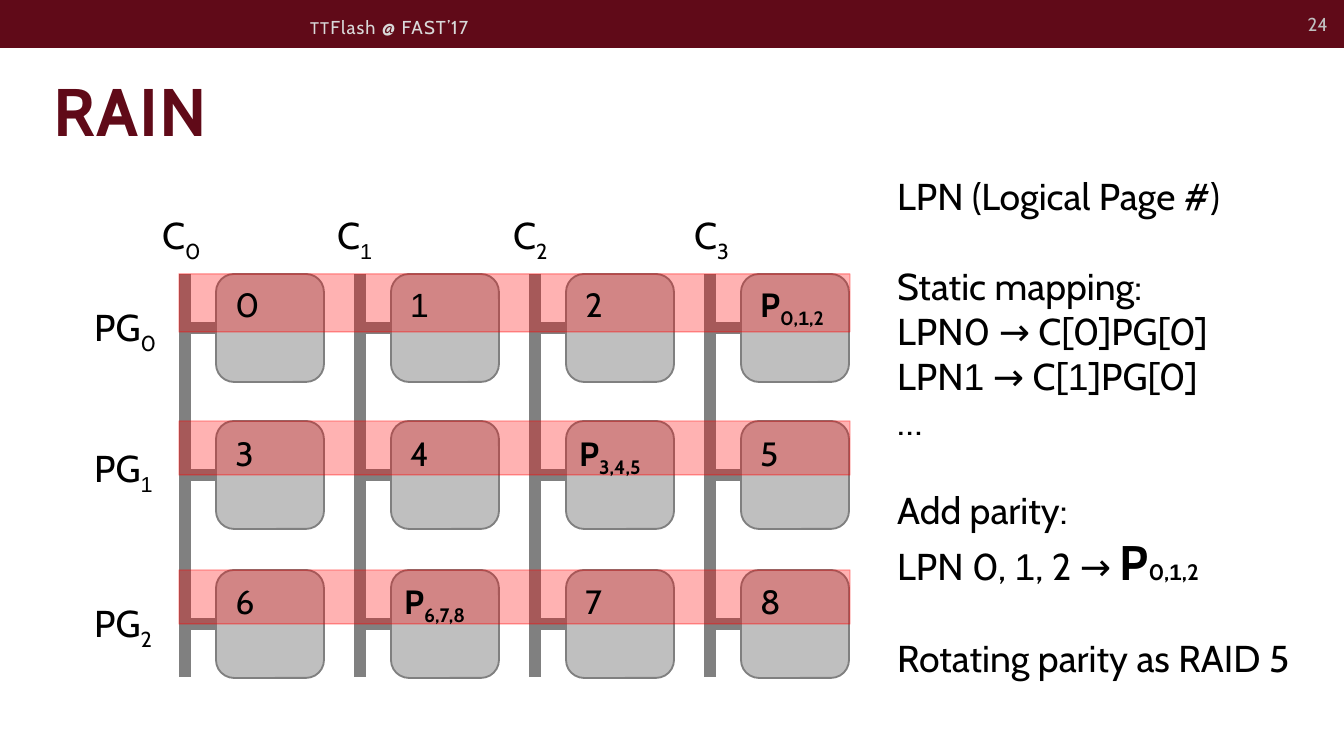
from collections import namedtuple
from itertools import groupby

from lxml.etree import SubElement
from pptx import Presentation
from pptx.dml.color import RGBColor
from pptx.enum.shapes import MSO_CONNECTOR as LINE, MSO_SHAPE as SHAPE
from pptx.enum.text import MSO_ANCHOR as ANCHOR, MSO_AUTO_SIZE as FIT, PP_ALIGN as ALIGN
from pptx.oxml.ns import qn
from pptx.util import Pt

MAROON = RGBColor(0x60, 0x0A, 0x18)
BLACK = RGBColor(0, 0, 0)
GRAY = RGBColor(0x80, 0x80, 0x80)
SILVER = RGBColor(0xBF, 0xBF, 0xBF)
PALE = RGBColor(0xD9, 0xD9, 0xD9)
RED = RGBColor(0xFF, 0, 0)

Box = namedtuple("Box", "x y w h")
Row = namedtuple("Row", "top band label text inset cells")

BUS, STEP, CARD = 104, 175, 108
HEADS = (68, 243, 419, 600)
ROWS = (
    Row(68, 58, 92, 71, 6, ("0", "1", "2", "P0,1,2")),
    Row(215, 54, 233, 220, 0, ("3", "4", "P3,4,5", "5")),
    Row(364, 54, 388, 368, 0, ("6", "P6,7,8", "7", "8")),
)


def px(n):
    return round(n * 914400 / 134.4)


def add_run(para, text, size, color=BLACK, bold=False, sub=False, gap=0, face="Cabin"):
    run = para.add_run()
    run.text = text
    font = run.font
    font.name, font.size, font.bold = face, Pt(size), bold
    font.color.rgb = color
    props = font._element
    if sub:
        props.set("baseline", "-25000")
    if gap:
        props.set("spc", str(gap))


def add_mix(para, text, size, **style):
    """Set the digit 1 in Arial and all else in Cabin."""
    for one, part in groupby(text, lambda c: c == "1"):
        add_run(para, "".join(part), size, face="Arial" if one else "Cabin", **style)


def add_text(slide, box, anchor=ANCHOR.TOP):
    frame = slide.shapes.add_textbox(*map(px, box)).text_frame
    frame.word_wrap = True
    frame.vertical_anchor = anchor
    return frame


def add_label(slide, box, stem, sub="", size=20, bold=False):
    para = add_text(slide, box).paragraphs[0]
    add_mix(para, stem, size, bold=bold)
    add_mix(para, sub, size, bold=bold, sub=True)


def add_wire(slide, x1, y1, x2, y2):
    wire = slide.shapes.add_connector(LINE.STRAIGHT, *map(px, (x1, y1, x2, y2)))
    wire.line.color.rgb = GRAY
    wire.line.width = Pt(6)
    SubElement(wire._element.spPr, qn("a:effectLst"))


def add_block(slide, kind, box, fill, line=None, width=1):
    block = slide.shapes.add_shape(kind, *map(px, box))
    block.shadow.inherit = False
    block.fill.solid()
    block.fill.fore_color.rgb = fill
    if line is None:
        block.line.fill.background()
    else:
        block.line.color.rgb = line
        block.line.width = Pt(width)
    return block


def add_band(slide, box):
    band = add_block(slide, SHAPE.RECTANGLE, box, RED, RED, 0.75)
    for tint in band._element.spPr.iter(qn("a:srgbClr")):
        SubElement(tint, qn("a:alpha")).set("val", "30000")


def add_header(slide, box):
    add_block(slide, SHAPE.RECTANGLE, box, MAROON)
    para = add_text(slide, Box(box.x + 297, box.y + 8, 478, 39), ANCHOR.MIDDLE).paragraphs[0]
    add_run(para, "TT", 9, PALE, gap=60)
    add_run(para, "Flash @ FAST’17", 10, PALE, gap=60)
    para = add_text(slide, Box(box.x + 1223, box.y - 1, 118, 50), ANCHOR.MIDDLE).paragraphs[0]
    para.alignment = ALIGN.RIGHT
    add_run(para, "24", 10, SILVER)


def add_title(slide, box):
    title = slide.shapes.title
    title.left, title.top, title.width, title.height = map(px, box)
    frame = title.text_frame
    frame.auto_size = FIT.NONE
    frame.vertical_anchor = ANCHOR.BOTTOM
    para = frame.paragraphs[0]
    para.alignment = ALIGN.LEFT
    add_run(para, "RAIN", 36, MAROON, bold=True, gap=50)


def add_grid(slide, box):
    """Channels run down, plane groups run across."""
    for col, head in enumerate(HEADS):
        bus = box.x + BUS + col * STEP
        add_wire(slide, bus, box.y + ROWS[0].top, bus, box.y + box.h)
        add_label(slide, Box(box.x + head, box.y, 83, 59), "C", str(col))
        for row in ROWS:
            top = box.y + row.top
            add_wire(slide, bus, top + CARD // 2, bus + 31, top + CARD // 2)
            add_block(slide, SHAPE.ROUNDED_RECTANGLE,
                      Box(bus + 31, top, CARD, CARD), SILVER, GRAY)

    for num, row in enumerate(ROWS):
        add_band(slide, Box(box.x + 98, box.y + row.top, box.w - 98, row.band))
        add_label(slide, Box(box.x, box.y + row.label, 100, 59), "PG", str(num))
        for col, cell in enumerate(row.cells):
            parity = cell[0] == "P"
            left = box.x + BUS + 31 + col * STEP + (row.inset if parity else 6)
            add_label(slide, Box(left, box.y + row.text, 110, 54),
                      cell[0], cell[1:], 18, parity)


def add_notes(slide, box):
    """Each line is a list of (text, size, bold) with a gap before it."""
    lines = (
        (0, [("LPN (Logical Page #)", 20, False)]),
        (24, [("Static mapping:", 20, False)]),
        (0, [("LPN0 → C[0]PG[0]", 20, False)]),
        (0, [("LPN1 → C[1]PG[0]", 20, False)]),
        (0, [("…", 20, False)]),
        (24, [("Add parity:", 20, False)]),
        (0, [("LPN 0, 1, 2 → ", 20, False), ("P", 26, True), ("0,1,2", 12, True)]),
        (24, [("Rotating parity as RAID 5", 20, False)]),
    )
    frame = add_text(slide, box)
    for num, (gap, parts) in enumerate(lines):
        para = frame.add_paragraph() if num else frame.paragraphs[0]
        if gap:
            para.space_before = Pt(gap)
        for text, size, bold in parts:
            add_mix(para, text, size, bold=bold)


def main():
    deck = Presentation()
    deck.slide_width, deck.slide_height = px(1344), px(756)
    slide = deck.slides.add_slide(deck.slide_layouts[5])
    add_header(slide, Box(0, 0, 1344, 48))
    add_title(slide, Box(40, 31, 1267, 126))
    add_grid(slide, Box(81, 206, 769, 471))
    add_notes(slide, Box(884, 167, 445, 555))
    deck.save("out.pptx")


if __name__ == "__main__":
    main()
